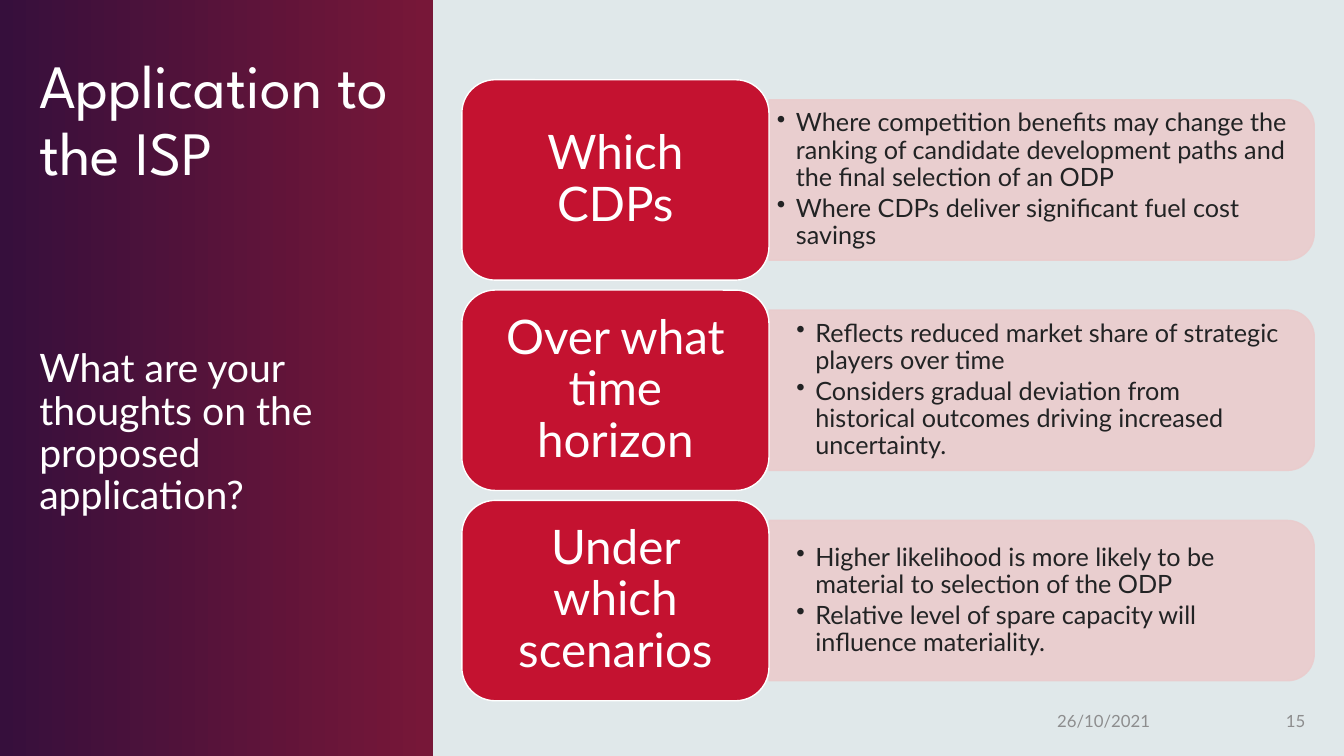
from pptx import Presentation
from pptx.dml.color import RGBColor
from pptx.enum.shapes import MSO_SHAPE as Shape
from pptx.enum.text import MSO_ANCHOR as Anchor, MSO_AUTO_SIZE as AutoSize, PP_ALIGN as Align
from pptx.oxml.ns import qn
from pptx.util import Cm, Pt
from lxml.etree import SubElement

RED, PINK, WHITE, INK, GREY = "C41230", "EACCCD", "FFFFFF", "222324", "8D8D8E"
BODY_FONT, TITLE_FONT = "Lato", "League Spartan"

TOPICS = [
    ("Which CDPs", 0.2, [
        "Where competition benefits may change the ranking of candidate development "
        "paths and the final selection of an ODP",
        "Where CDPs deliver significant fuel cost savings"]),
    ("Over what time horizon", 0.69, [
        "Reflects reduced market share of strategic players over time",
        "Considers gradual deviation from historical outcomes driving increased uncertainty."]),
    ("Under which scenarios", 0.69, [
        "Higher likelihood is more likely to be material to selection of the ODP",
        "Relative level of spare capacity will influence materiality."]),
]


def rgb(value):
    return RGBColor.from_string(value)


def set_frame(frame, anchor, side=0.25, edge=0.13):
    frame.word_wrap = True
    frame.auto_size = AutoSize.NONE
    frame.vertical_anchor = anchor
    frame.margin_left = frame.margin_right = Cm(side)
    frame.margin_top = frame.margin_bottom = Cm(edge)


def set_bullet(para, indent):
    """Give the paragraph a hanging bullet, or none when the indent is zero."""
    props = para._p.get_or_add_pPr()
    props.set("marL", str(Cm(indent)))
    props.set("indent", str(-Cm(indent)))
    if indent:
        SubElement(props, qn("a:buChar"), char="•")
    else:
        SubElement(props, qn("a:buNone"))


def write(para, text, size, color, font=BODY_FONT, align=Align.LEFT, spacing=0.9):
    para.alignment = align
    para.line_spacing = spacing
    para.space_before = Pt(0)
    span = para.add_run()
    span.text = text
    span.font.size = Pt(size)
    span.font.name = font
    span.font.color.rgb = rgb(color)


def add_shape(page, kind, box, fill, line):
    shape = page.shapes.add_shape(kind, *map(Cm, box))
    shape.shadow.inherit = False
    shape.fill.solid()
    shape.fill.fore_color.rgb = rgb(fill)
    shape.line.color.rgb = rgb(line)
    shape.line.width = Pt(1)
    return shape


def place(holder, box):
    holder.left, holder.top, holder.width, holder.height = map(Cm, box)
    set_frame(holder.text_frame, Anchor.TOP)
    return holder.text_frame.paragraphs[0]


def add_side_panel(page, left, top, width, height):
    panel = page.shapes.add_shape(Shape.RECTANGLE, *map(Cm, (left, top, width, height)))
    panel.shadow.inherit = False
    panel.line.fill.background()
    panel.fill.gradient()
    panel.fill.gradient_angle = 0
    for stop, position, color in zip(panel.fill.gradient_stops, (0, 0.99), ("360F3C", "771738")):
        stop.position = position
        stop.color.rgb = rgb(color)
    tree = page.shapes._spTree
    tree.remove(panel._element)
    tree.insert(2, panel._element)  # behind the title and body

    title, body = page.placeholders
    write(place(title, (left + 0.74, top + 1.27, 9.88, 3.68)),
          "Application to the ISP", 44, WHITE, TITLE_FONT)
    question = place(body, (left + 0.74, top + 8.66, 9.22, 5.13))
    set_bullet(question, 0)
    write(question, "What are your thoughts on the proposed application?", 28, WHITE)


def add_note(page, left, top, width, height, side, points):
    """Draw a band rounded on the right, with its bullets on top."""
    turned = (left + (width - height) / 2, top + (height - width) / 2, height, width)
    band = add_shape(page, Shape.ROUND_2_SAME_RECTANGLE, turned, PINK, PINK)
    band.rotation = 90
    for color in band._element.spPr.iter(qn("a:srgbClr")):
        SubElement(color, qn("a:alpha"), val="90000")

    box = page.shapes.add_textbox(*map(Cm, (left, top + 0.2, width - 0.18, height - 0.4)))
    frame = box.text_frame
    set_frame(frame, Anchor.MIDDLE, side, side / 2)
    for index, point in enumerate(points):
        para = frame.add_paragraph() if index else frame.paragraphs[0]
        set_bullet(para, 0.48)
        write(para, point, 18, INK)
        para.space_after = Pt(2.7)


def add_topic(page, left, top, width, height, heading, side, points):
    tile_width, note_height = 7.74, 4.04
    add_note(page, left + tile_width, top + (height - note_height) / 2,
             width - tile_width, note_height, side, points)
    tile = add_shape(page, Shape.ROUNDED_RECTANGLE, (left, top, tile_width, height), RED, WHITE)
    set_frame(tile.text_frame, Anchor.MIDDLE, 0.36, 0.18)
    write(tile.text_frame.paragraphs[0], heading, 34, WHITE, align=Align.CENTER)


def add_topics(page, left, top, width, height):
    gap = 0.25
    row = (height - gap * (len(TOPICS) - 1)) / len(TOPICS)
    for index, topic in enumerate(TOPICS):
        add_topic(page, left, top + index * (row + gap), width, row, *topic)


def add_footer(page, left, top, width, height):
    number_width = 1.6
    parts = [("26/10/2021", left, 4.83, Align.LEFT),
             ("15", left + width - number_width, number_width, Align.RIGHT)]
    for text, start, span_width, align in parts:
        box = page.shapes.add_textbox(*map(Cm, (start, top, span_width, height)))
        set_frame(box.text_frame, Anchor.MIDDLE)
        write(box.text_frame.paragraphs[0], text, 12, GREY, align=align, spacing=1)


def main():
    deck = Presentation()
    deck.slide_width, deck.slide_height = Cm(33.87), Cm(19.05)
    page = deck.slides.add_slide(deck.slide_layouts[1])
    page.background.fill.solid()
    page.background.fill.fore_color.rgb = rgb("E0E8EA")
    add_side_panel(page, 0, 0, 10.92, 19.05)
    add_topics(page, 11.64, 2.01, 21.48, 15.65)
    add_footer(page, 26.39, 17.65, 6.76, 1.02)
    deck.save("out.pptx")


if __name__ == "__main__":
    main()
